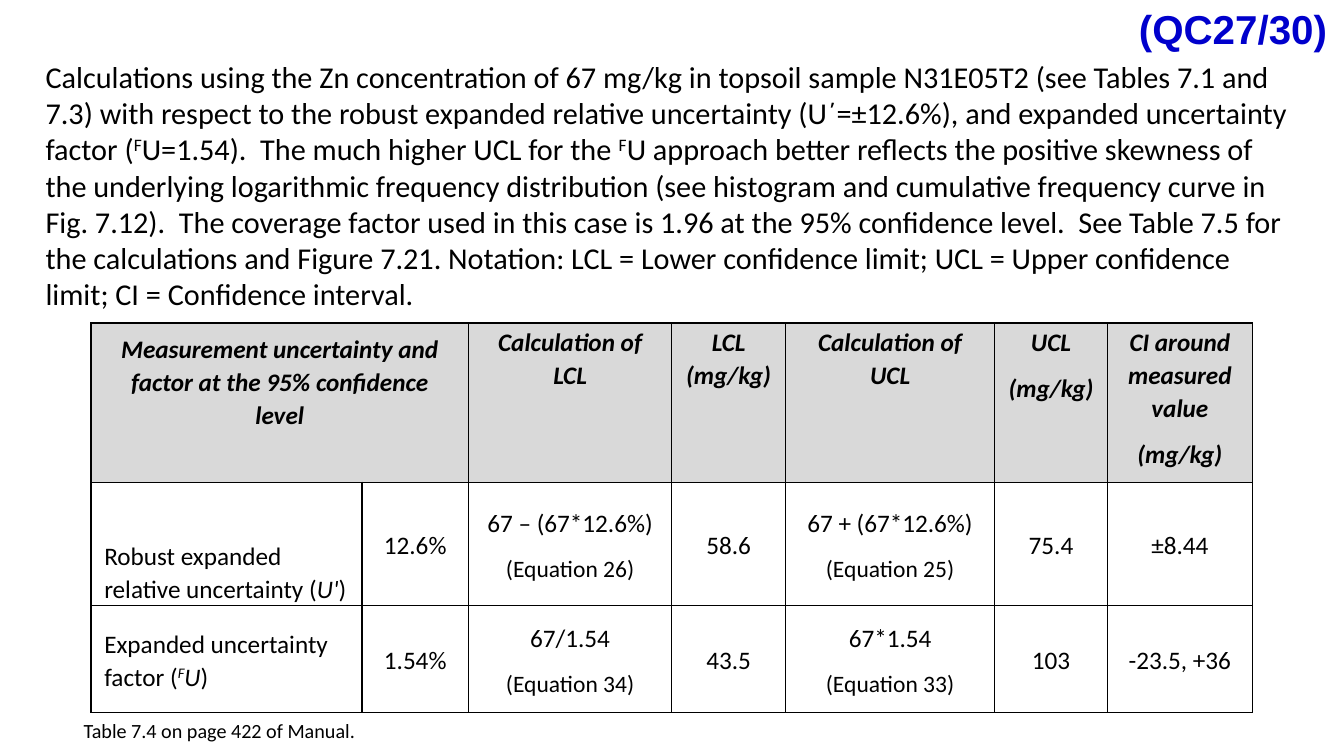
import pptx
import pptx.util
import pptx.dml.color
import pptx.enum.text
import pptx.oxml
import pptx.oxml.ns

Pt = pptx.util.Pt
RGBColor = pptx.dml.color.RGBColor
ALIGN = pptx.enum.text.PP_ALIGN
ANCHOR = pptx.enum.text.MSO_ANCHOR

BLACK = RGBColor(0x00, 0x00, 0x00)
BLUE = RGBColor(0x00, 0x00, 0xCC)
GREY = RGBColor(0xD9, 0xD9, 0xD9)

SUPER = "superscript"
ITALIC = "italic"

EXPLANATION = [
    ("Calculations using the Zn concentration of 67 mg/kg in topsoil sample N31E05T2 "
     "(see Tables 7.1 and 7.3) with respect to the robust expanded relative uncertainty "
     "(U΄=±12.6%), and expanded uncertainty factor (",),
    ("F", SUPER),
    ("U=1.54).  The much higher UCL for the ",),
    ("F", SUPER),
    ("U approach better reflects the positive skewness of the underlying logarithmic "
     "frequency distribution (see histogram and cumulative frequency curve in Fig. 7.12).  "
     "The coverage factor used in this case is 1.96 at the 95% confidence level.  "
     "See Table 7.5 for the calculations and Figure 7.21. Notation: LCL = Lower confidence "
     "limit; UCL = Upper confidence limit; CI = Confidence interval.",),
]

COLUMN_WIDTHS = [161.3, 63.4, 121, 67.7, 124.6, 67, 86.4]
ROW_HEIGHTS = [95, 73.4, 63.4]
HEADERS = [
    ["Measurement uncertainty and factor at the 95% confidence level"],
    [],
    ["Calculation of LCL"],
    ["LCL (mg/kg)"],
    ["Calculation of UCL"],
    ["UCL", "(mg/kg)"],
    ["CI around measured value", "(mg/kg)"],
]
ROW_LABELS = [
    [("Robust expanded relative uncertainty (",), ("U'", ITALIC), (")",)],
    [("Expanded uncertainty factor (",), ("F", ITALIC, SUPER), ("U", ITALIC), (")",)],
]
ROW_VALUES = [
    [["12.6%"], ["67 – (67*12.6%)", "(Equation 26)"], ["58.6"],
     ["67 + (67*12.6%)", "(Equation 25)"], ["75.4"], ["±8.44"]],
    [["1.54%"], ["67/1.54", "(Equation 34)"], ["43.5"],
     ["67*1.54", "(Equation 33)"], ["103"], ["-23.5, +36"]],
]


def add_runs(para, pieces, size, font="Calibri", color=BLACK, bold=False, italic=False):
    for text, *marks in pieces:
        run = para.add_run()
        run.text = text
        run.font.name = font
        run.font.size = Pt(size)
        run.font.color.rgb = color
        run.font.bold = bold
        run.font.italic = italic or ITALIC in marks
        if SUPER in marks:
            run.font._element.set("baseline", "30000")


def add_text(page, left, top, width, height, pieces, size, align=ALIGN.LEFT, **style):
    box = page.shapes.add_textbox(Pt(left), Pt(top), Pt(width), Pt(height))
    box.text_frame.word_wrap = True
    para = box.text_frame.paragraphs[0]
    para.alignment = align
    add_runs(para, pieces, size, **style)


def set_borders(cell):
    properties = cell._tc.get_or_add_tcPr()
    for index, side in enumerate(("lnL", "lnR", "lnT", "lnB")):
        line = pptx.oxml.parse_xml(
            f'<a:{side} {pptx.oxml.ns.nsdecls("a")} w="{Pt(1)}">'
            f'<a:solidFill><a:srgbClr val="{BLACK}"/></a:solidFill></a:{side}>')
        properties.insert(index, line)


def set_margins(cell, side, top, bottom):
    cell.margin_left = cell.margin_right = Pt(side)
    cell.margin_top = Pt(top)
    cell.margin_bottom = Pt(bottom)


def fill_cell(cell, paragraphs, align=ALIGN.CENTER, anchor=ANCHOR.MIDDLE, header=False):
    set_margins(cell, 7.9, 1.4, 0)
    cell.vertical_anchor = anchor
    if header:
        cell.fill.solid()
        cell.fill.fore_color.rgb = GREY
    else:
        cell.fill.background()
    set_borders(cell)
    frame = cell.text_frame
    for index, pieces in enumerate(paragraphs):
        para = frame.add_paragraph() if index else frame.paragraphs[0]
        para.alignment = align
        para.line_spacing = 1.07
        para.space_after = Pt(8)
        size = 14 if index and not header else 15
        add_runs(para, pieces, size, bold=header, italic=header)


def plain(lines):
    return [[(line,)] for line in lines]


def add_uncertainty_table(page):
    frame = page.shapes.add_table(len(ROW_HEIGHTS), len(COLUMN_WIDTHS), Pt(54.2), Pt(192.2),
                                  Pt(sum(COLUMN_WIDTHS)), Pt(sum(ROW_HEIGHTS)))
    table = frame.table
    table.first_row = False
    table.horz_banding = False
    for column, width in zip(table.columns, COLUMN_WIDTHS):
        column.width = Pt(width)
    for row, height in zip(table.rows, ROW_HEIGHTS):
        row.height = Pt(height)

    for column, lines in enumerate(HEADERS):
        fill_cell(table.cell(0, column), plain(lines), anchor=ANCHOR.TOP, header=True)
    set_margins(table.cell(0, 0), 10.8, 5.8, 5.8)
    table.cell(0, 0).merge(table.cell(0, 1))

    label_anchors = [ANCHOR.BOTTOM, ANCHOR.MIDDLE]
    for row, (label, values) in enumerate(zip(ROW_LABELS, ROW_VALUES), 1):
        fill_cell(table.cell(row, 0), [label], ALIGN.LEFT, label_anchors[row - 1])
        for column, lines in enumerate(values, 1):
            fill_cell(table.cell(row, column), plain(lines))


def main():
    deck = pptx.Presentation()
    deck.slide_width = Pt(800)
    deck.slide_height = Pt(450)
    page = deck.slides.add_slide(deck.slide_layouts[6])
    add_uncertainty_table(page)
    add_text(page, 20, 31, 760, 160, EXPLANATION, 18)
    add_text(page, 42.7, 424.3, 181.5, 21.8, [("Table 7.4 on page 422 of Manual.",)], 12)
    add_text(page, 666.7, -1.2, 130.3, 36.3, [("(QC27/30)",)], 24, ALIGN.RIGHT,
             font="Arial", color=BLUE, bold=True)
    deck.save("out.pptx")


if __name__ == "__main__":
    main()
